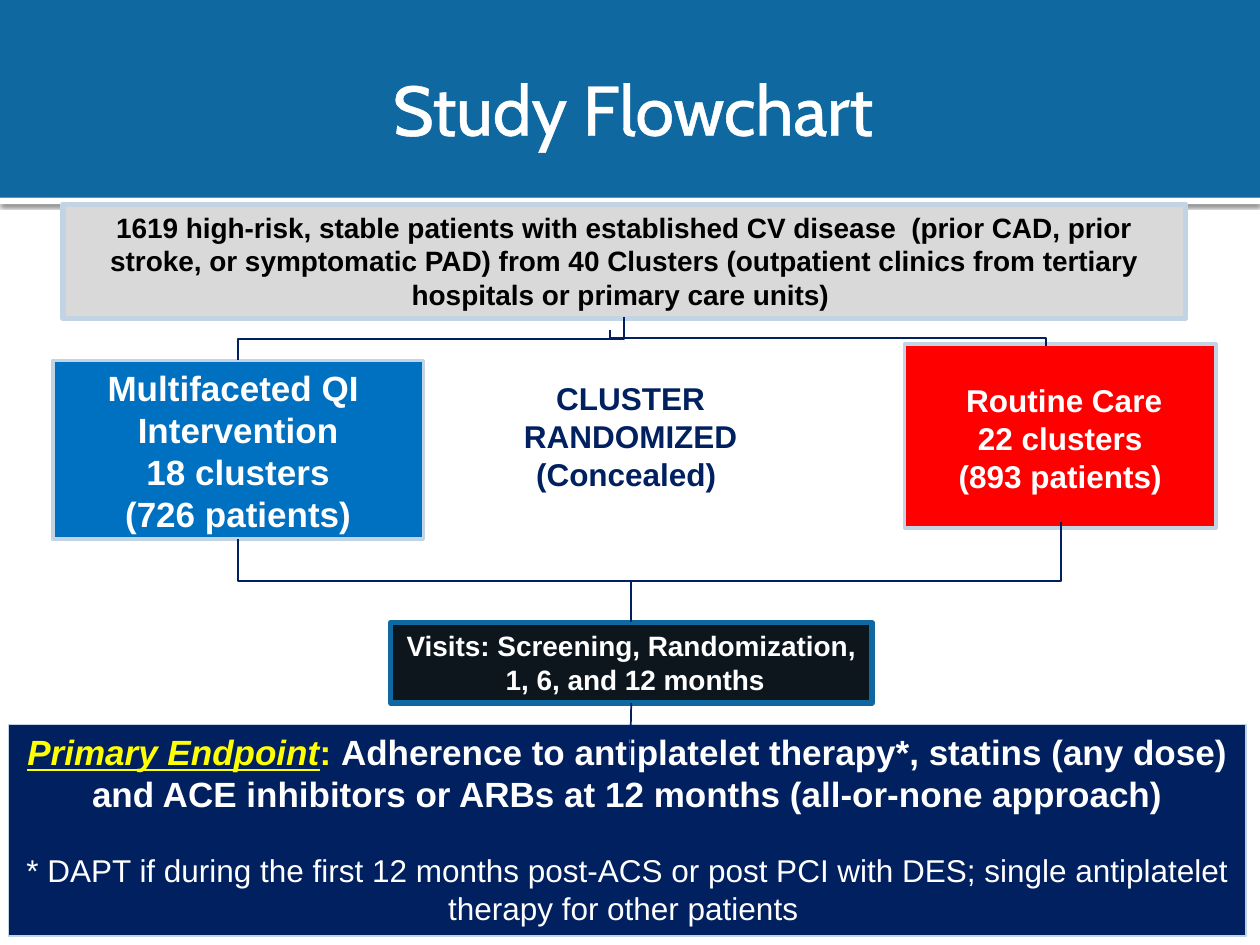
from lxml import etree
from pptx import Presentation
from pptx.dml.color import RGBColor
from pptx.enum.shapes import MSO_CONNECTOR, MSO_SHAPE
from pptx.enum.text import MSO_ANCHOR, PP_ALIGN
from pptx.oxml import parse_xml
from pptx.oxml.ns import nsdecls, qn
from pptx.util import Inches, Pt

RECTANGLE = MSO_SHAPE.RECTANGLE
ELBOW, STRAIGHT = MSO_CONNECTOR.ELBOW, MSO_CONNECTOR.STRAIGHT
TOP, MIDDLE = MSO_ANCHOR.TOP, MSO_ANCHOR.MIDDLE
CENTER = PP_ALIGN.CENTER

COLORS = {
    "white": "FFFFFF", "black": "000000", "banner": "0F689F", "blue": "0070C0",
    "red": "FF0000", "ink": "0D161D", "gray": "D9D9D9", "navy": "002060",
    "pale": "C2D4E3", "yellow": "FFFF00",
}


def rgb(name):
    return RGBColor.from_string(COLORS[name])


def add_box(slide, left, top, width, height, fill, line=None, line_width=1):
    shape = slide.shapes.add_shape(
        RECTANGLE, Inches(left), Inches(top), Inches(width), Inches(height))
    shape.shadow.inherit = False
    shape.fill.solid()
    shape.fill.fore_color.rgb = rgb(fill)
    if line:
        shape.line.color.rgb = rgb(line)
        shape.line.width = Pt(line_width)
    else:
        shape.line.fill.background()
    return shape


def add_text_box(slide, left, top, width, height):
    return slide.shapes.add_textbox(
        Inches(left), Inches(top), Inches(width), Inches(height))


def add_run(paragraph, text, size=18, color="white", font="Arial",
            bold=True, italic=False, underline=False):
    run = paragraph.add_run()
    run.text = text
    run.font.name = font
    run.font.size = Pt(size)
    run.font.bold = bold
    run.font.italic = italic
    run.font.underline = underline
    run.font.color.rgb = rgb(color)
    return run


def write(shape, *paragraphs, anchor=TOP, wrap=True, **text_format):
    """Fill a shape with centred paragraphs, each a string or a list of (text, format) runs."""
    frame = shape.text_frame
    frame.word_wrap = wrap
    frame.vertical_anchor = anchor
    for index, content in enumerate(paragraphs):
        paragraph = frame.paragraphs[0] if index == 0 else frame.add_paragraph()
        paragraph.alignment = CENTER
        runs = [(content, {})] if isinstance(content, str) else content
        for text, changes in runs:
            add_run(paragraph, text, **{**text_format, **changes})
    return frame


def add_connector(slide, kind, start, end):
    connector = slide.shapes.add_connector(
        kind, *(Inches(value) for value in (*start, *end)))
    connector.line.color.rgb = rgb("navy")
    connector.line.width = Pt(1)
    etree.SubElement(connector._element.spPr, qn("a:effectLst"))
    return connector


def add_elbow(slide, start, end, preset="bentConnector3"):
    """Draw an elbow that leaves its start downwards, by turning the preset a quarter."""
    connector = add_connector(slide, ELBOW, start, end)
    (x1, y1), (x2, y2) = start, end
    width, height = abs(y2 - y1), abs(x2 - x1)
    connector.left = Inches((x1 + x2 - width) / 2)
    connector.top = Inches((y1 + y2 - height) / 2)
    connector.width, connector.height = Inches(width), Inches(height)
    properties = connector._element.spPr
    transform = properties.find(qn("a:xfrm"))
    goes_right = x2 > x1
    transform.set("rot", str((270 if goes_right else 90) * 60000))
    transform.set("flipH", "1" if goes_right else "0")
    properties.find(qn("a:prstGeom")).set("prst", preset)


def add_banner(slide):
    rule = add_box(slide, 0, 1.57, 10, 0.05, "white")
    effects = rule._element.spPr.find(qn("a:effectLst"))
    effects.append(parse_xml(
        f'<a:outerShdw {nsdecls("a")} blurRad="{Pt(2.5)}" dist="{Pt(0.8)}" dir="5400000">'
        f'<a:srgbClr val="{COLORS["black"]}"><a:alpha val="60000"/></a:srgbClr>'
        '</a:outerShdw>'))
    add_box(slide, 0, 0, 10, 1.57, "banner")


def add_title(slide):
    title = add_text_box(slide, 0.51, 0.17, 8.98, 1.37)
    frame = write(title, "Study Flowchart", anchor=MIDDLE,
                  size=40, font="Cabin", bold=False)
    frame.margin_right = Inches(0.05)
    outline = parse_xml(
        f'<a:ln {nsdecls("a")} w="{Pt(1.45)}"><a:solidFill>'
        f'<a:srgbClr val="{COLORS["white"]}"/></a:solidFill></a:ln>')
    frame.paragraphs[0].runs[0].font._element.insert(0, outline)


def add_boxes(slide):
    intervention = add_box(slide, 0.42, 2.86, 2.94, 1.42, "blue", "pale", 2)
    write(intervention, "Multifaceted QI ", "Intervention", "18 clusters",
          "(726 patients)", wrap=False, size=20)

    routine_care = add_box(slide, 7.18, 2.73, 2.47, 1.46, "red", "pale", 2)
    write(routine_care,
          [(" ", {"size": 20, "font": "Cabin", "color": "pale"}), ("Routine Care", {})],
          "22 clusters", "(893 patients)", anchor=MIDDLE)

    visits = add_box(slide, 3.1, 4.94, 3.82, 0.64, "ink", "banner", 3)
    write(visits, "Visits: Screening, Randomization,", " 1, 6, and 12 months",
          wrap=False, size=16)

    patients = add_box(slide, 0.5, 1.62, 8.91, 0.91, "gray", "pale", 3)
    write(patients,
          "1619 high-risk, stable patients with established CV disease  (prior CAD, "
          "prior stroke, or symptomatic PAD) from 40 Clusters (outpatient clinics "
          "from tertiary hospitals or primary care units) ",
          size=16, color="black")

    endpoint = add_box(slide, 0.07, 5.75, 9.82, 1.68, "navy", "pale", 0.75)
    frame = write(
        endpoint,
        [("Primary Endpoint", {"color": "yellow", "italic": True, "underline": True}),
         (": ", {"color": "yellow"}),
         ("Adherence to antiplatelet therapy*, statins (any dose) and ACE inhibitors "
          "or ARBs at 12 months (all-or-none approach)", {})],
        [("* DAPT if during the first 12 months post-ACS or post PCI with DES; single "
          "antiplatelet therapy for other patients ", {"size": 18, "bold": False})],
        size=20)
    frame.paragraphs[1].space_before = Pt(20.7)

    randomized = add_text_box(slide, 4.05, 2.96, 1.91, 1.31)
    write(randomized, "CLUSTER", "RANDOMIZED", "(Concealed) ", wrap=False, color="navy")


def add_connectors(slide):
    add_elbow(slide, (4.95, 2.52), (1.89, 2.86))
    add_elbow(slide, (4.84, 2.62), (8.3, 2.75))
    add_elbow(slide, (1.89, 4.28), (5.01, 4.94))
    add_elbow(slide, (8.42, 4.14), (5, 4.61), preset="bentConnector2")
    add_connector(slide, STRAIGHT, (5.01, 5.58), (5, 6.09))


def main():
    presentation = Presentation()
    presentation.slide_width, presentation.slide_height = Inches(10), Inches(7.5)
    slide = presentation.slides.add_slide(presentation.slide_layouts[6])
    add_banner(slide)
    add_boxes(slide)
    add_connectors(slide)
    add_title(slide)
    presentation.save("out.pptx")


if __name__ == "__main__":
    main()
